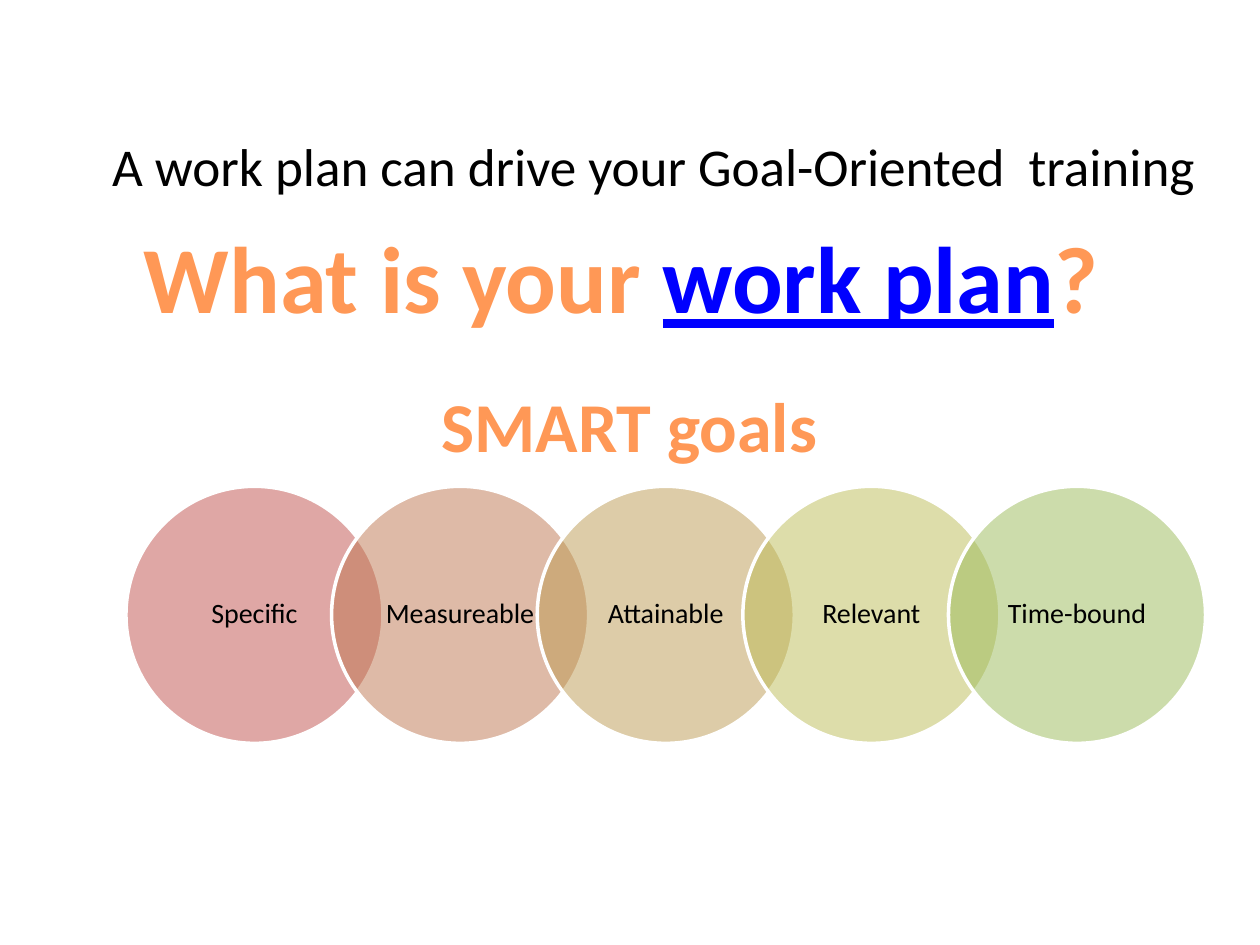
"""Build a slide on work plans and the five SMART goals."""
from dataclasses import dataclass

from lxml import etree
from pptx import Presentation
from pptx.dml.color import RGBColor
from pptx.enum.shapes import MSO_SHAPE
from pptx.enum.text import MSO_ANCHOR, MSO_AUTO_SIZE, PP_ALIGN
from pptx.oxml.ns import qn
from pptx.util import Inches, Pt

OVAL = MSO_SHAPE.OVAL
MIDDLE = MSO_ANCHOR.MIDDLE
TOP = MSO_ANCHOR.TOP
NO_FIT = MSO_AUTO_SIZE.NONE
CENTER = PP_ALIGN.CENTER
LEFT = PP_ALIGN.LEFT


@dataclass(frozen=True)
class Theme:
    font: str = "Calibri"
    ink: str = "000000"
    accent: str = "FF9856"
    link: str = "0000FF"
    edge: str = "FFFFFF"
    head: float = 54
    sub: float = 40
    lead: float = 30.4
    label: float = 16


@dataclass(frozen=True)
class Goal:
    name: str
    color: str


@dataclass(frozen=True)
class Box:
    left: float
    top: float
    width: float
    height: float


THEME = Theme()
GOALS = (
    Goal("Specific", "C0504D"),
    Goal("Measureable", "BF7750"),
    Goal("Attainable", "BD9B53"),
    Goal("Relevant", "BCBC56"),
    Goal("Time-bound", "9BBB59"),
)
SIZE = 2.04
ROW = Box(1, 3.86, SIZE, SIZE)
STEP = SIZE * 0.8


def place(shape, box: Box) -> None:
    """Move and size a shape in inches."""
    shape.left, shape.top = Inches(box.left), Inches(box.top)
    shape.width, shape.height = Inches(box.width), Inches(box.height)


def style(para, size: float, color: str, bold: bool = False, align=CENTER) -> None:
    """Set the font and alignment of a paragraph."""
    para.alignment = align
    font = para.font
    font.name, font.size, font.bold = THEME.font, Pt(size), bold
    font.color.rgb = RGBColor.from_string(color)


def fit(frame, wrap: bool, anchor) -> None:
    """Fix wrapping and anchor, with no shrinking of text."""
    frame.auto_size = NO_FIT
    frame.word_wrap = wrap
    frame.vertical_anchor = anchor


def add_head(slide) -> None:
    """Fill the title, with its last words marked as a link."""
    title = slide.shapes.title
    place(title, Box(1, 1.69, 7.86, 1.01))
    fit(title.text_frame, False, TOP)
    para = title.text_frame.paragraphs[0]
    style(para, THEME.head, THEME.accent, bold=True)
    para.add_run().text = "What is your "
    link = para.add_run()
    link.text = "work plan"
    link.font.underline = True
    link.font.color.rgb = RGBColor.from_string(THEME.link)
    para.add_run().text = "?"


def add_lead(slide) -> None:
    """Fill the body with one line that has no bullet."""
    body = slide.placeholders[1]
    place(body, Box(0.79, 1.01, 9, 1.08))
    fit(body.text_frame, True, TOP)
    para = body.text_frame.paragraphs[0]
    para.text = "A work plan can drive your Goal-Oriented  training"
    style(para, THEME.lead, THEME.ink, align=LEFT)
    props = para._p.get_or_add_pPr()
    props.set("marL", "0")
    props.set("indent", "0")
    props.insert_element_before(
        etree.Element(qn("a:buNone")), "a:tabLst", "a:defRPr", "a:extLst"
    )


def add_sub(slide) -> None:
    """Add the heading above the goals."""
    box = Box(3.39, 2.99, 3.21, 0.77)
    shape = slide.shapes.add_textbox(0, 0, 0, 0)
    place(shape, box)
    fit(shape.text_frame, False, TOP)
    para = shape.text_frame.paragraphs[0]
    para.text = "SMART goals"
    style(para, THEME.sub, THEME.accent, bold=True)


def add_goal(slide, goal: Goal, left: float) -> None:
    """Add one half-clear circle with its label."""
    shape = slide.shapes.add_shape(OVAL, 0, 0, 0, 0)
    place(shape, Box(left, ROW.top, ROW.width, ROW.height))
    shape.shadow.inherit = False
    shape.fill.solid()
    shape.fill.fore_color.rgb = RGBColor.from_string(goal.color)
    tint = shape._element.spPr.find(qn("a:solidFill"))[0]
    etree.SubElement(tint, qn("a:alpha"), val="50000")
    shape.line.color.rgb = RGBColor.from_string(THEME.edge)
    shape.line.width = Pt(2)
    frame = shape.text_frame
    fit(frame, True, MIDDLE)
    frame.margin_left = frame.margin_right = Inches(0.11)
    frame.margin_top = frame.margin_bottom = Inches(0.02)
    para = frame.paragraphs[0]
    para.text = goal.name
    para.line_spacing = 0.9
    style(para, THEME.label, THEME.ink)


def main() -> None:
    """Build and save the slide."""
    deck = Presentation()
    deck.slide_width, deck.slide_height = Inches(10), Inches(7.5)
    slide = deck.slides.add_slide(deck.slide_layouts[1])
    add_lead(slide)
    add_head(slide)
    add_sub(slide)
    for index, goal in enumerate(GOALS):
        add_goal(slide, goal, ROW.left + index * STEP)
    deck.save("out.pptx")


if __name__ == "__main__":
    main()
